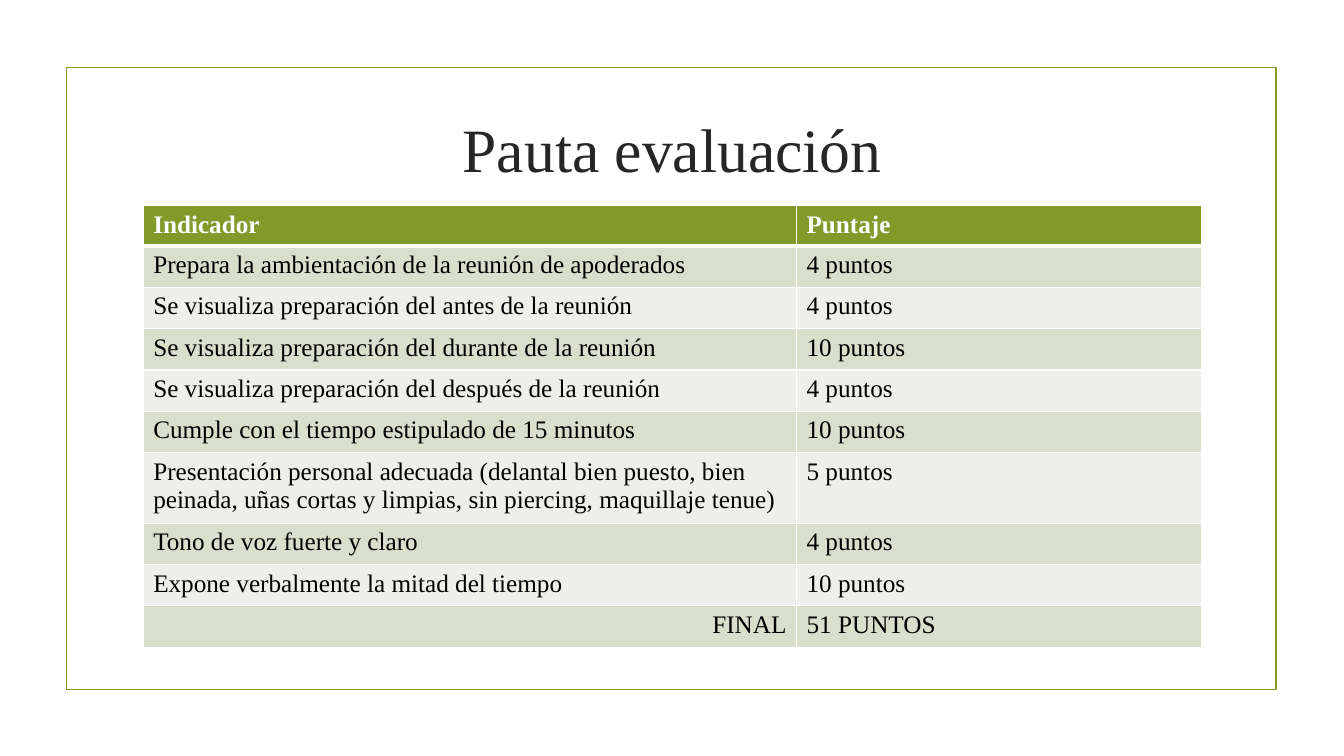
from lxml import etree
from pptx import Presentation
from pptx.dml.color import RGBColor
from pptx.enum.shapes import MSO_SHAPE
from pptx.enum.text import MSO_ANCHOR, PP_ALIGN
from pptx.oxml.ns import qn
from pptx.util import Inches, Pt

# Content
TITLE = "Pauta evaluación"
ROWS = [
    ("Indicador", "Puntaje"),
    ("Prepara la ambientación de la reunión de apoderados", "4 puntos"),
    ("Se visualiza preparación del antes de la reunión", "4 puntos"),
    ("Se visualiza preparación del durante de la reunión", "10 puntos"),
    ("Se visualiza preparación del después de la reunión", "4 puntos"),
    ("Cumple con el tiempo estipulado de 15 minutos", "10 puntos"),
    ("Presentación personal adecuada (delantal bien puesto, bien peinada, "
     "uñas cortas y limpias, sin piercing, maquillaje tenue)", "5 puntos"),
    ("Tono de voz fuerte y claro", "4 puntos"),
    ("Expone verbalmente la mitad del tiempo", "10 puntos"),
    ("FINAL", "51 PUNTOS"),
]

# Style
FONT = "Times New Roman"
GREEN = RGBColor(0x83, 0x99, 0x2A)
BANDS = (RGBColor(0xED, 0xEF, 0xE8), RGBColor(0xD9, 0xDE, 0xCD))
WHITE = RGBColor(0xFF, 0xFF, 0xFF)
BLACK = RGBColor(0, 0, 0)
DARK = RGBColor(0x26, 0x26, 0x26)
RECTANGLE = MSO_SHAPE.RECTANGLE
MIDDLE = MSO_ANCHOR.MIDDLE
CENTER, LEFT, RIGHT = PP_ALIGN.CENTER, PP_ALIGN.LEFT, PP_ALIGN.RIGHT

# Layout in inches
CONTENT_X, CONTENT_W = 1.42, 10.5
COLUMNS = (6.48, 4.02)
HEADER_H, ROW_H = 0.31, 0.41


def set_font(p, size, color, bold=False):
    p.font.name = FONT
    p.font.size = Pt(size)
    p.font.color.rgb = color
    p.font.bold = bold


def set_borders(cell, color, bottom):
    tcPr = cell._tc.get_or_add_tcPr()
    for side, width in (("L", 1), ("R", 1), ("T", 1), ("B", bottom)):
        ln = etree.SubElement(tcPr, qn("a:ln" + side), w=str(Pt(width)))
        fill = etree.SubElement(ln, qn("a:solidFill"))
        etree.SubElement(fill, qn("a:srgbClr"), val=str(color))


prs = Presentation()
prs.slide_width, prs.slide_height = Inches(13.33), Inches(7.5)
s = prs.slides.add_slide(prs.slide_layouts[6])

# Frame
frame = s.shapes.add_shape(RECTANGLE, Inches(0.66), Inches(0.67), Inches(12), Inches(6.17))
frame.shadow.inherit = False
frame.fill.background()
frame.line.color.rgb = GREEN
frame.line.width = Pt(1.25)

# Title
title = s.shapes.add_textbox(Inches(CONTENT_X), Inches(0.75), Inches(CONTENT_W), Inches(1.43))
tf = title.text_frame
tf.word_wrap = True
tf.vertical_anchor = MIDDLE
p = tf.paragraphs[0]
p.text = TITLE
p.alignment = CENTER
set_font(p, 44, DARK)

# Score table
table = s.shapes.add_table(
    len(ROWS), len(COLUMNS), Inches(CONTENT_X), Inches(2.04), Inches(CONTENT_W),
    Inches(HEADER_H + ROW_H * (len(ROWS) - 1))).table
for column, width in zip(table.columns, COLUMNS):
    column.width = Inches(width)
for i, texts in enumerate(ROWS):
    header = i == 0
    table.rows[i].height = Inches(HEADER_H if header else ROW_H)
    for j, text in enumerate(texts):
        cell = table.cell(i, j)
        set_borders(cell, WHITE, 3 if header else 1)
        cell.fill.solid()
        cell.fill.fore_color.rgb = GREEN if header else BANDS[i % 2]
        p = cell.text_frame.paragraphs[0]
        p.text = text
        p.alignment = RIGHT if text == "FINAL" else LEFT
        set_font(p, 18, WHITE if header else BLACK, header)

prs.save("out.pptx")
